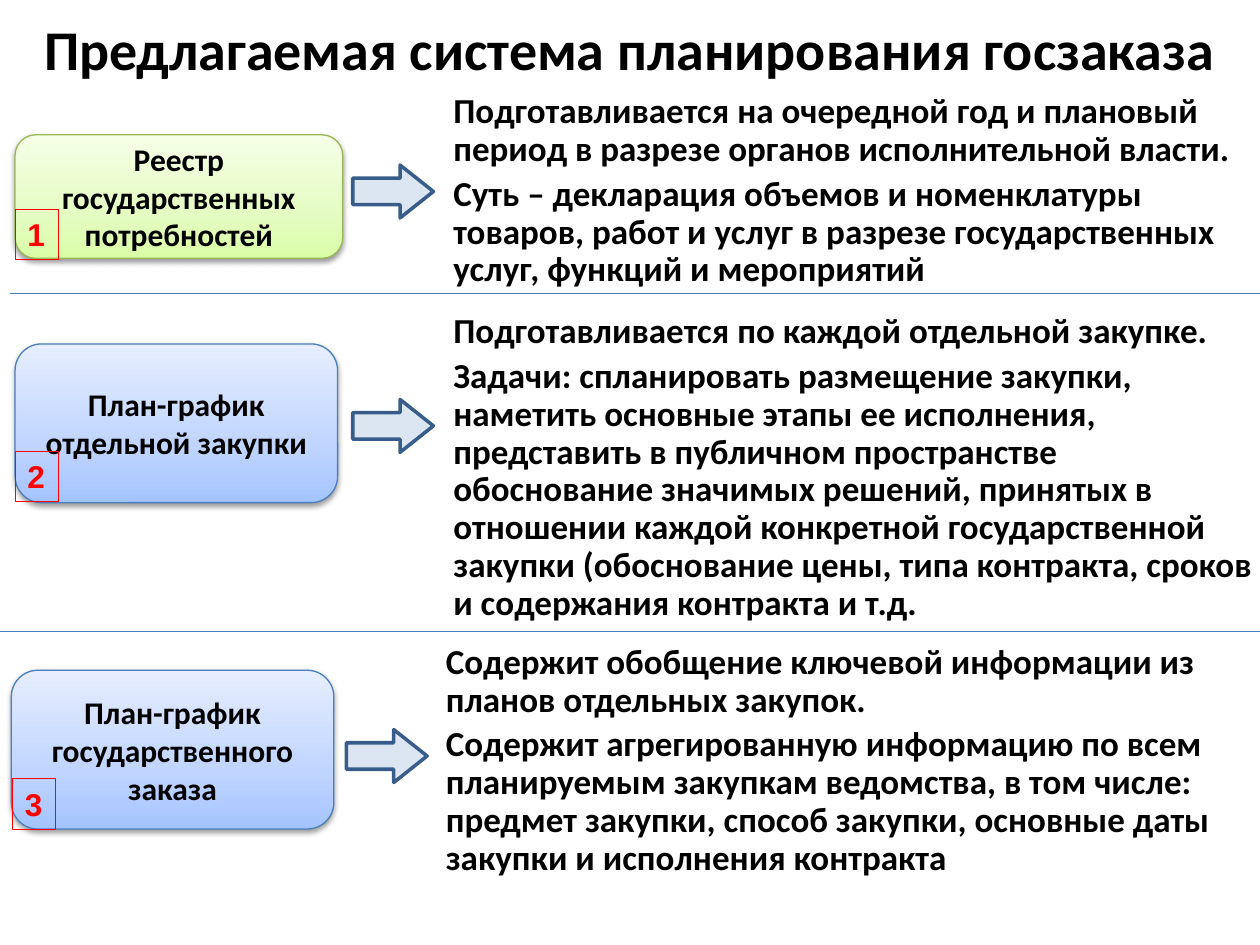
from copy import deepcopy
from dataclasses import dataclass

from lxml.etree import SubElement
from pptx import Presentation
from pptx.dml.color import RGBColor as RGB
from pptx.enum.shapes import MSO_CONNECTOR, MSO_SHAPE as SHAPE
from pptx.enum.text import MSO_ANCHOR as ANCHOR, MSO_AUTO_SIZE as AUTO, PP_ALIGN as ALIGN
from pptx.oxml.ns import qn
from pptx.util import Inches, Pt


@dataclass(frozen=True)
class Theme:
    font: str = "Calibri"
    badge_font: str = "Arial"
    title_size: int = 32
    body_size: int = 20
    label_size: int = 18
    text: str = "000000"
    badge: str = "FF0000"
    rule: str = "4B7EBC"
    arrow_fill: str = "DCE6F2"
    arrow_line: str = "385D8A"
    # Box styles: gradient colours from bottom to top, then the outline
    green: tuple = (("DAFDA7", "E4FCC2", "F5FFE7"), "98B955")
    blue: tuple = (("A4C4FF", "BFD4FF", "E6EEFF"), "4B7EBC")


class Deck:
    """Holds the theme and the slide being drawn."""

    def __init__(self, slide, theme):
        self.s, self.theme = slide, theme

    def _font(self, p, size, color=None, name=None):
        f = p.font
        f.size, f.bold, f.name = Pt(size), True, name or self.theme.font
        f.color.rgb = RGB.from_string(color or self.theme.text)

    def _shape(self, kind, at, line, width):
        sp = self.s.shapes.add_shape(kind, *map(Inches, at))
        sp.shadow.inherit = False
        sp.line.color.rgb = RGB.from_string(line)
        sp.line.width = Pt(width)
        return sp

    def title(self, text):
        sp = self.s.shapes.title
        sp.left, sp.top, sp.width, sp.height = map(Inches, (0, 0, 10, 0.76))
        tf = sp.text_frame
        tf.text = text
        tf.vertical_anchor, tf.auto_size = ANCHOR.MIDDLE, AUTO.NONE
        p = tf.paragraphs[0]
        p.alignment = ALIGN.CENTER
        self._font(p, self.theme.title_size)

    def box(self, text, at, style):
        colors, line = style
        sp = self._shape(SHAPE.ROUNDED_RECTANGLE, at, line, 0.75)
        sp.fill.gradient()
        sp.fill.gradient_angle = 90
        sp_pr = sp._element.spPr
        stops = sp_pr.find(".//" + qn("a:gsLst"))
        stops.insert(1, deepcopy(stops[0]))
        for stop, color, pos in zip(sp.fill.gradient_stops, colors, (0, 0.35, 1)):
            stop.color.rgb = RGB.from_string(color)
            stop.position = pos
        shadow = SubElement(sp_pr.find(qn("a:effectLst")), qn("a:outerShdw"),
                            blurRad=str(Pt(3.1)), dist=str(Pt(1.6)),
                            dir="5400000", rotWithShape="0")
        black = SubElement(shadow, qn("a:srgbClr"), val="000000")
        SubElement(black, qn("a:alpha"), val="38000")
        tf = sp.text_frame
        tf.text, tf.word_wrap = text, True
        tf.vertical_anchor = ANCHOR.MIDDLE
        p = tf.paragraphs[0]
        p.alignment = ALIGN.CENTER
        self._font(p, self.theme.label_size)

    def arrow(self, left, top):
        sp = self._shape(SHAPE.RIGHT_ARROW, (left, top, 0.64, 0.42),
                         self.theme.arrow_line, 2)
        sp.adjustments[1] = 0.63
        sp.fill.solid()
        sp.fill.fore_color.rgb = RGB.from_string(self.theme.arrow_fill)

    def description(self, paragraphs, at):
        tf = self.s.shapes.add_textbox(*map(Inches, at)).text_frame
        tf.word_wrap, tf.vertical_anchor = True, ANCHOR.MIDDLE
        for i, text in enumerate(paragraphs):
            p = tf.add_paragraph() if i else tf.paragraphs[0]
            p.text = text
            p.line_spacing, p.space_before = 0.9, Pt(4)
            self._font(p, self.theme.body_size)

    def badge(self, number, left, top):
        sp = self._shape(SHAPE.RECTANGLE, (left, top, 0.34, 0.4), self.theme.badge, 0.25)
        sp.fill.background()
        tf = sp.text_frame
        tf.text, tf.word_wrap = str(number), False
        tf.vertical_anchor, tf.auto_size = ANCHOR.TOP, AUTO.SHAPE_TO_FIT_TEXT
        p = tf.paragraphs[0]
        p.alignment = ALIGN.LEFT
        self._font(p, self.theme.label_size, self.theme.badge, self.theme.badge_font)

    def rule(self, left, top, width=10.27):
        ends = map(Inches, (left, top, left + width, top))
        line = self.s.shapes.add_connector(MSO_CONNECTOR.STRAIGHT, *ends)
        line.line.color.rgb = RGB.from_string(self.theme.rule)
        line.line.width = Pt(0.75)
        SubElement(line._element.spPr, qn("a:effectLst"))


def main():
    prs = Presentation()
    prs.slide_width, prs.slide_height = Inches(10), Inches(7.5)
    theme = Theme()
    deck = Deck(prs.slides.add_slide(prs.slide_layouts[5]), theme)

    # Label, box, box style, arrow, badge, description place, description
    stages = [
        ("Реестр государственных потребностей", (0.12, 1.07, 2.6, 0.98), theme.green,
         (2.8, 1.31), (0.12, 1.66), (3.5, 0.68, 6.5, 1.68),
         ["Подготавливается на очередной год и плановый период в разрезе органов "
          "исполнительной власти.",
          "Суть – декларация объемов и номенклатуры товаров, работ и услуг в разрезе "
          "государственных услуг, функций и мероприятий"]),
        ("План-график отдельной закупки", (0.12, 2.73, 2.56, 1.26), theme.blue,
         (2.8, 3.17), (0.12, 3.58), (3.5, 2.42, 6.57, 2.59),
         ["Подготавливается по каждой отдельной закупке.",
          "Задачи: спланировать размещение закупки, наметить основные этапы ее "
          "исполнения, представить в публичном пространстве обоснование значимых "
          "решений, принятых в отношении каждой конкретной государственной закупки "
          "(обоснование цены, типа контракта, сроков и содержания контракта и т.д."]),
        ("План-график государственного заказа", (0.09, 5.32, 2.56, 1.26), theme.blue,
         (2.75, 5.79), (0.1, 6.18), (3.44, 5.04, 6.57, 2.0),
         ["Содержит обобщение ключевой информации из планов отдельных закупок.",
          "Содержит агрегированную информацию по всем планируемым закупкам ведомства, "
          "в том числе: предмет закупки, способ закупки, основные даты закупки и "
          "исполнения контракта"]),
    ]

    deck.title("Предлагаемая система планирования госзаказа")
    for number, stage in enumerate(stages, 1):
        label, box_at, style, arrow_at, badge_at, text_at, paragraphs = stage
        deck.arrow(*arrow_at)
        deck.box(label, box_at, style)
        deck.description(paragraphs, text_at)
        deck.badge(number, *badge_at)
    deck.rule(0.08, 2.33)
    deck.rule(0, 5.01)
    prs.save("out.pptx")


if __name__ == "__main__":
    main()
